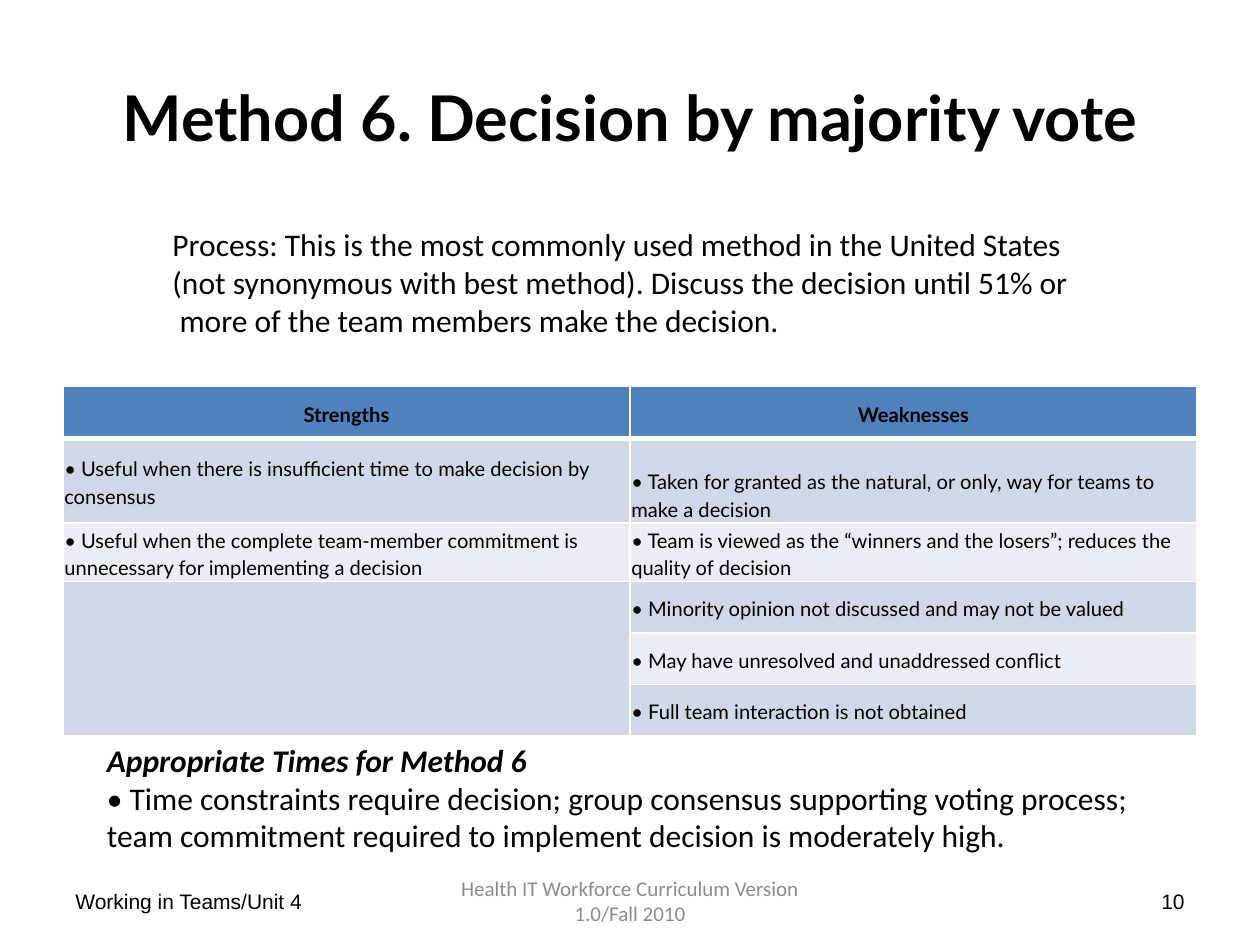
from lxml.etree import SubElement
from pptx import Presentation
from pptx.dml.color import RGBColor
from pptx.enum.text import MSO_ANCHOR, PP_ALIGN
from pptx.oxml.ns import qn
from pptx.util import Pt

STRENGTHS = [
    "• Useful when there is insufficient time to make decision by consensus",
    "• Useful when the complete team-member commitment is unnecessary for implementing a decision",
]
WEAKNESSES = [
    "• Taken for granted as the natural, or only, way for teams to make a decision",
    "• Team is viewed as the “winners and the losers”; reduces the quality of decision",
    "• Minority opinion not discussed and may not be valued",
    "• May have unresolved and unaddressed conflict",
    "• Full team interaction is not obtained",
]
PROCESS = [
    "Process: This is the most commonly used method in the United States",
    "(not synonymous with best method). Discuss the decision until 51% or",
    " more of the team members make the decision.",
]
TIMES = [
    "• Time constraints require decision; group consensus supporting voting process;",
    "team commitment required to implement decision is moderately high.",
]
ROW_HEIGHTS = [29.5, 48.5, 33, 29.5, 29.5, 29.5]
HEADER_FILL = "4F81BD"
BAND_FILLS = ["D0D8E8", "E9EDF4"]


def color(value):
    """Turn a hex string into a colour."""
    return RGBColor.from_string(value)


def write(para, text, size=18, font="Calibri", fill="000000", bold=False,
          italic=False, align=PP_ALIGN.LEFT):
    """Write one formatted span into a paragraph."""
    para.alignment = align
    span = para.add_run()
    span.text = text
    span.font.size = Pt(size)
    span.font.name = font
    span.font.color.rgb = color(fill)
    span.font.bold = bold
    span.font.italic = italic


def add_box(page, box, wrap=True, anchor=MSO_ANCHOR.MIDDLE):
    """Add a text box and return its text frame."""
    frame = page.shapes.add_textbox(*map(Pt, box)).text_frame
    frame.word_wrap = wrap
    frame.vertical_anchor = anchor
    return frame


def add_lines(page, box, lines, heading=None):
    """Add unwrapped lines of body text under an optional heading."""
    frame = add_box(page, box, wrap=False, anchor=MSO_ANCHOR.TOP)
    para = frame.paragraphs[0]
    if heading:
        write(para, heading, bold=True, italic=True)
        para = frame.add_paragraph()
    write(para, lines[0])
    for line in lines[1:]:
        write(frame.add_paragraph(), line)


def set_borders(cell, bottom):
    """Draw white borders around a cell, before its fill is set."""
    properties = cell._tc.get_or_add_tcPr()
    for side, width in (("L", 1), ("R", 1), ("T", 1), ("B", bottom)):
        line = SubElement(properties, qn(f"a:ln{side}"), w=str(Pt(width)))
        SubElement(SubElement(line, qn("a:solidFill")), qn("a:srgbClr"), val="FFFFFF")


def fill_cell(cell, text, row):
    """Format a table cell by its row and write its text."""
    header = row == 0
    set_borders(cell, bottom=3 if header else 1)
    cell.fill.solid()
    cell.fill.fore_color.rgb = color(HEADER_FILL if header else BAND_FILLS[(row - 1) % 2])
    cell.margin_left = cell.margin_right = Pt(0.75)
    cell.margin_top = cell.margin_bottom = Pt(0.75)
    cell.vertical_anchor = MSO_ANCHOR.MIDDLE
    if text:
        para = cell.text_frame.paragraphs[0]
        para.line_spacing = 1.15
        para.space_after = Pt(10)
        write(para, text, size=11.5, font="Lato", bold=header,
              align=PP_ALIGN.CENTER if header else PP_ALIGN.LEFT)


def add_comparison(page, box):
    """Add the table of strengths and weaknesses."""
    columns = [["Strengths"] + STRENGTHS, ["Weaknesses"] + WEAKNESSES]
    table = page.shapes.add_table(len(ROW_HEIGHTS), len(columns), *map(Pt, box)).table
    for row, height in enumerate(ROW_HEIGHTS):
        table.rows[row].height = Pt(height)
        for column, texts in enumerate(columns):
            text = texts[row] if row < len(texts) else ""
            fill_cell(table.cell(row, column), text, row)
    table.cell(1, 1).vertical_anchor = MSO_ANCHOR.BOTTOM
    table.cell(len(columns[0]), 0).merge(table.cell(len(ROW_HEIGHTS) - 1, 0))


def add_footer(page, box):
    """Add the unit name, the curriculum version and the page number."""
    left, top, width, height = box
    side, middle = 168, 228
    parts = [
        (left, side, "Working in Teams/Unit 4", "Arial", "000000", PP_ALIGN.LEFT),
        (left + (width - middle) / 2, middle,
         "Health IT Workforce Curriculum Version 1.0/Fall 2010",
         "Calibri", "8C8C8C", PP_ALIGN.CENTER),
        (left + width - side, side, "10", "Arial", "000000", PP_ALIGN.RIGHT),
    ]
    for x, part_width, text, font, fill, align in parts:
        frame = add_box(page, (x, top, part_width, height))
        write(frame.paragraphs[0], text, size=12, font=font, fill=fill, align=align)


def add_title(page, box):
    """Add the centred slide title."""
    write(add_box(page, box).paragraphs[0], "Method 6. Decision by majority vote",
          size=36, font="Lato", bold=True, align=PP_ALIGN.CENTER)


def main():
    """Build the slide and save the deck."""
    deck = Presentation()
    deck.slide_width, deck.slide_height = Pt(720), Pt(540)
    page = deck.slides.add_slide(deck.slide_layouts[6])
    add_title(page, (36, 21.6, 648, 90))
    add_comparison(page, (36, 221, 648, sum(ROW_HEIGHTS)))
    add_lines(page, (91.5, 125.3, 532.8, 72.7), PROCESS)
    add_lines(page, (54, 419.8, 609, 72.7), TIMES, heading="Appropriate Times for Method 6")
    add_footer(page, (36, 500.5, 648, 28.75))
    deck.save("out.pptx")


if __name__ == "__main__":
    main()
